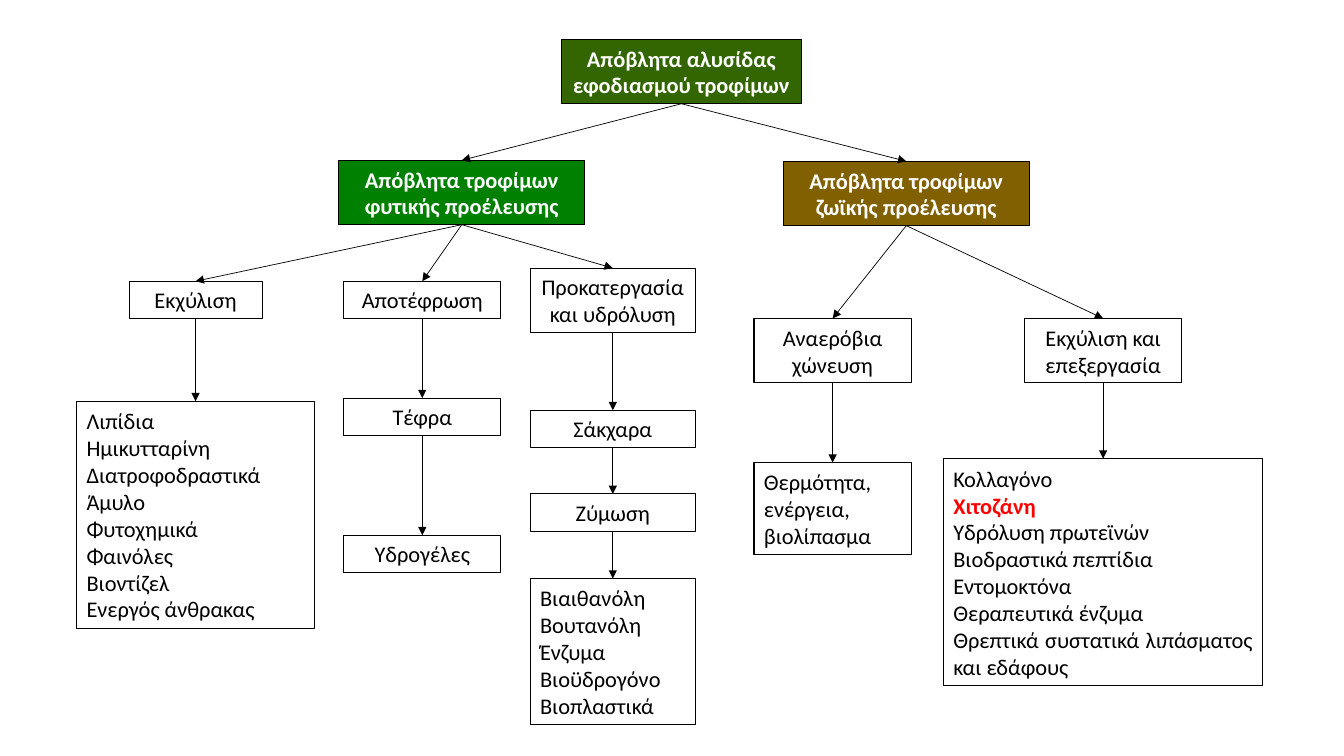
import pptx
import pptx.dml.color
import pptx.enum.dml
import pptx.enum.shapes
import pptx.enum.text
import pptx.oxml
import pptx.util
from collections import namedtuple

Pt = pptx.util.Pt
RGBColor = pptx.dml.color.RGBColor
Align = pptx.enum.text.PP_ALIGN

BLACK = RGBColor(0x00, 0x00, 0x00)
WHITE = RGBColor(0xFF, 0xFF, 0xFF)
RED = RGBColor(0xFF, 0x00, 0x00)
CHAIN_GREEN = RGBColor(0x33, 0x66, 0x00)
PLANT_GREEN = RGBColor(0x00, 0x80, 0x00)
ANIMAL_BROWN = RGBColor(0x80, 0x60, 0x00)

FONT = "Calibri"
TEXT_SIZE = 16
ROW_HEIGHT = 19.4
INSETS = 7.2
HIGHLIGHT = "Χιτοζάνη"

Area = namedtuple("Area", "left top width")
Step = namedtuple("Step", "drop width rows align lines")

ROOT_AREA = Area(401, 28.1, 171.5)
PLANT_AREA = Area(242, 114.5, 175.7)
ANIMAL_AREA = Area(559.5, 115.2, 175.7)

PLANT_COLUMNS = [
    (Area(54.7, 200.9, 170), [
        Step(0, 95, 1, Align.CENTER, ["Εκχύλιση"]),
        Step(85.7, 170, 8, Align.JUSTIFY, [
            "Λιπίδια", "Ημικυτταρίνη", "Διατροφοδραστικά", "Άμυλο",
            "Φυτοχημικά", "Φαινόλες", "Βιοντίζελ", "Ενεργός άνθρακας"]),
    ]),
    (Area(245.5, 200.9, 112.3), [
        Step(0, 112.3, 1, Align.CENTER, ["Αποτέφρωση"]),
        Step(83.5, 112.3, 1, Align.CENTER, ["Τέφρα"]),
        Step(181.4, 112.3, 1, Align.CENTER, ["Υδρογέλες"]),
    ]),
    (Area(378.7, 191.5, 118.1), [
        Step(0, 118.1, 2, Align.CENTER, ["Προκατεργασία και υδρόλυση"]),
        Step(101.5, 118.1, 1, Align.CENTER, ["Σάκχαρα"]),
        Step(161.3, 118.1, 1, Align.CENTER, ["Ζύμωση"]),
        Step(221.8, 118.1, 5, Align.JUSTIFY, [
            "Βιαιθανόλη", "Βουτανόλη", "Ένζυμα", "Βιοϋδρογόνο", "Βιοπλαστικά"]),
    ]),
]
ANIMAL_COLUMNS = [
    (Area(538.6, 227.5, 112.3), [
        Step(0, 112.3, 2, Align.CENTER, ["Αναερόβια χώνευση"]),
        Step(103, 112.3, 3, Align.JUSTIFY, ["Θερμότητα, ενέργεια, βιολίπασμα"]),
    ]),
    (Area(673.9, 227.5, 228.2), [
        Step(0, 112.3, 2, Align.CENTER, ["Εκχύλιση και επεξεργασία"]),
        Step(100.1, 228.2, 8, Align.JUSTIFY, [
            "Κολλαγόνο", HIGHLIGHT, "Υδρόλυση πρωτεϊνών",
            "Βιοδραστικά πεπτίδια", "Εντομοκτόνα", "Θεραπευτικά ένζυμα",
            "Θρεπτικά συστατικά λιπάσματος και εδάφους"]),
    ]),
]


def add_box(page, area, rows, lines, align=Align.CENTER, fill=None, wrap=True):
    """Add a framed text box; a filled one carries bold white text."""
    box = page.shapes.add_shape(
        pptx.enum.shapes.MSO_SHAPE.RECTANGLE, Pt(area.left), Pt(area.top),
        Pt(area.width), Pt(rows * ROW_HEIGHT + INSETS))
    box.shadow.inherit = False
    box.line.color.rgb = BLACK
    box.line.width = Pt(0.75)
    if fill is None:
        box.fill.background()
    else:
        box.fill.solid()
        box.fill.fore_color.rgb = fill
    frame = box.text_frame
    frame.word_wrap = wrap
    frame.auto_size = pptx.enum.text.MSO_AUTO_SIZE.SHAPE_TO_FIT_TEXT
    for index, line in enumerate(lines):
        para = frame.add_paragraph() if index else frame.paragraphs[0]
        para.alignment = align
        span = para.add_run()
        span.text = line
        span.font.name = FONT
        span.font.size = Pt(TEXT_SIZE)
        span.font.bold = fill is not None or line == HIGHLIGHT
        plain = BLACK if fill is None else WHITE
        span.font.color.rgb = RED if line == HIGHLIGHT else plain
    return box


def add_arrow(page, source, target):
    """Join the bottom of one box to the top of another with an arrow."""
    arrow = page.shapes.add_connector(
        pptx.enum.shapes.MSO_CONNECTOR.STRAIGHT, 0, 0, 0, 0)
    arrow.begin_connect(source, 2)
    arrow.end_connect(target, 0)
    arrow.line.color.rgb = BLACK
    arrow.line.width = Pt(0.5)
    line = arrow.line._get_or_add_ln()
    namespace = pptx.oxml.ns.nsdecls("a")
    line.append(pptx.oxml.parse_xml(f'<a:tailEnd {namespace} type="triangle"/>'))
    line.addnext(pptx.oxml.parse_xml(f"<a:effectLst {namespace}/>"))


def add_column(page, area, steps, parent):
    """Stack centred process steps in an area and chain them to the parent."""
    for step in steps:
        left = area.left + (area.width - step.width) / 2
        place = Area(left, area.top + step.drop, step.width)
        box = add_box(page, place, step.rows, step.lines, step.align)
        add_arrow(page, parent, box)
        parent = box


def add_branch(page, area, root, title, fill, columns):
    """Add a waste category under the root with its treatment columns."""
    head = add_box(page, area, 2, [title], fill=fill)
    add_arrow(page, root, head)
    for column_area, steps in columns:
        add_column(page, column_area, steps, head)


def main():
    """Build the food waste diagram and save it."""
    deck = pptx.Presentation()
    deck.slide_width, deck.slide_height = Pt(960), Pt(540)
    page = deck.slides.add_slide(deck.slide_layouts[6])
    root = add_box(page, ROOT_AREA, 2, ["Απόβλητα αλυσίδας", "εφοδιασμού τροφίμων"],
                   fill=CHAIN_GREEN, wrap=False)
    add_branch(page, PLANT_AREA, root, "Απόβλητα τροφίμων φυτικής προέλευσης",
               PLANT_GREEN, PLANT_COLUMNS)
    add_branch(page, ANIMAL_AREA, root, "Απόβλητα τροφίμων ζωϊκής προέλευσης",
               ANIMAL_BROWN, ANIMAL_COLUMNS)
    deck.save("out.pptx")


if __name__ == "__main__":
    main()
